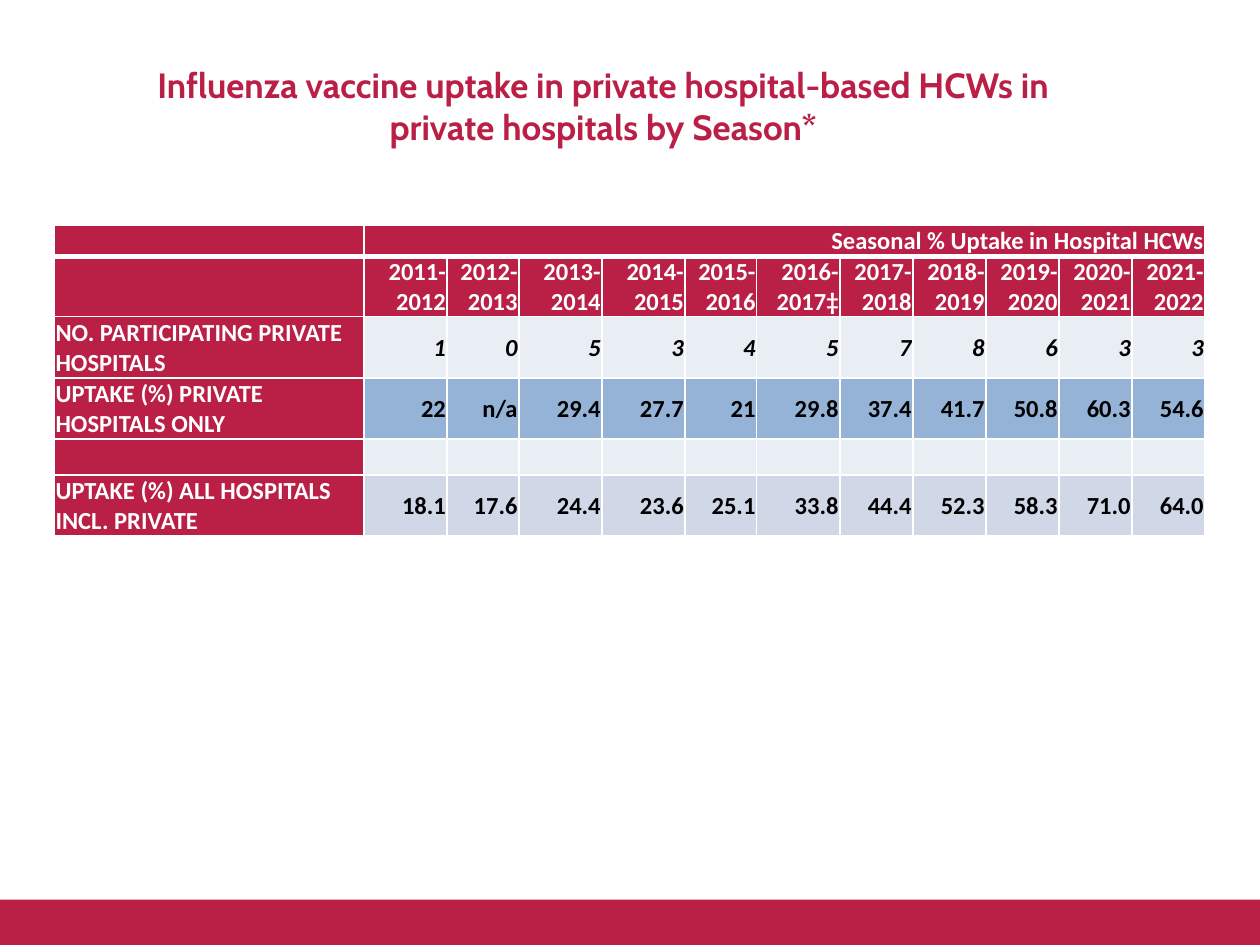
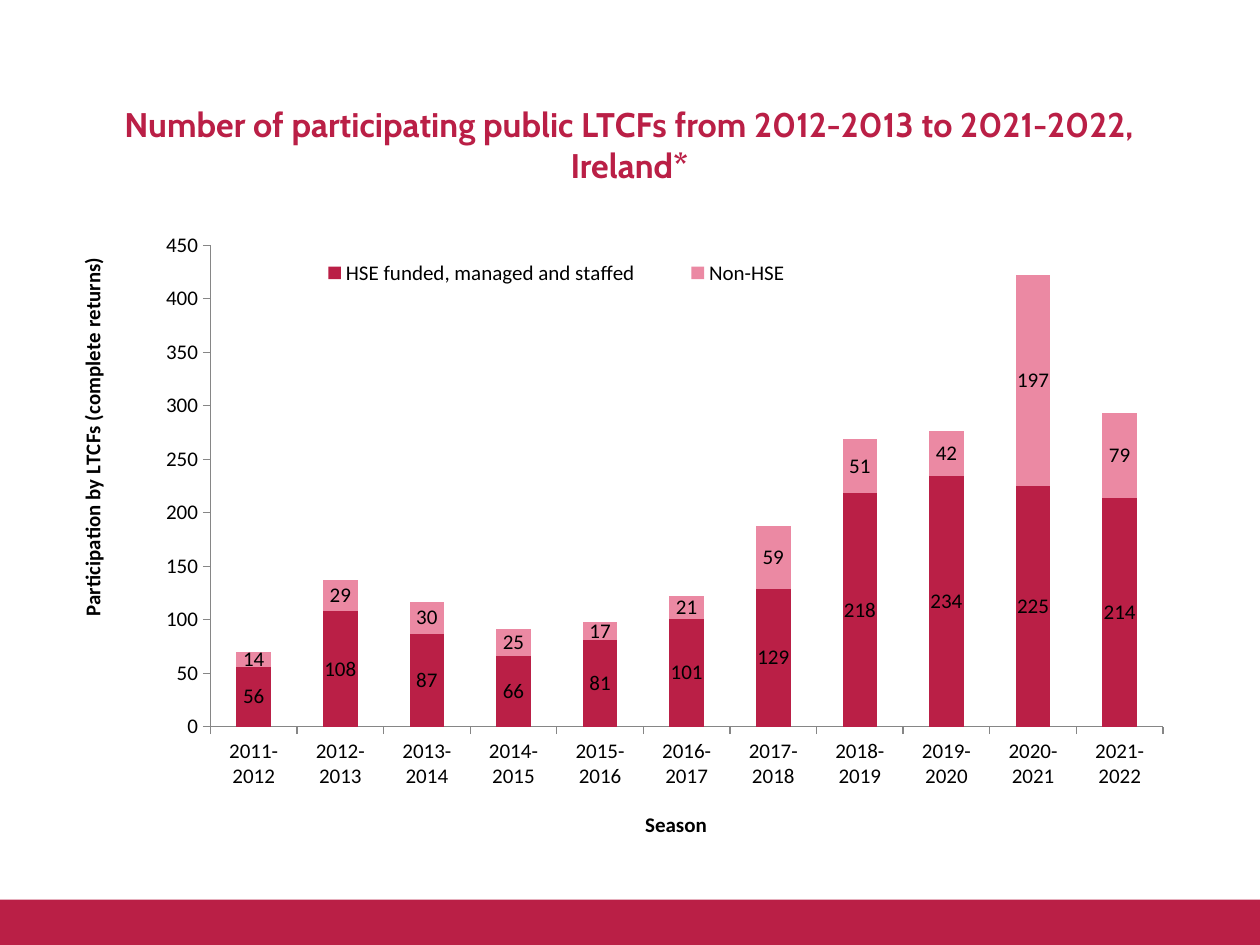
from dataclasses import dataclass
from typing import Any

from lxml.etree import SubElement
from pptx import Presentation
from pptx.chart.data import CategoryChartData
from pptx.dml.color import RGBColor
from pptx.enum.chart import XL_CHART_TYPE, XL_LEGEND_POSITION, XL_TICK_MARK
from pptx.enum.shapes import MSO_SHAPE
from pptx.enum.text import MSO_ANCHOR, PP_ALIGN
from pptx.oxml.ns import qn
from pptx.util import Pt

COLORS = {
    "crimson": "BA1F46",
    "pink": "EB89A3",
    "white": "FFFFFF",
    "black": "000000",
    "pale": "E9EDF4",
    "blue": "95B3D7",
    "mist": "D0D8E8",
    "axis": "868686",
}
SEASONS = [f"{year}-{year + 1}" for year in range(2011, 2022)]
TITLE_FONT = {"name": "Cabin", "bold": True}
TABLE_FONT = {"name": "Calibri", "size": Pt(14), "bold": True}
CHART_FONT = {"name": "Calibri", "size": Pt(12), "bold": False}
AXIS_TITLE_FONT = CHART_FONT | {"bold": True}
CELL_FORMAT = {
    "vertical_anchor": MSO_ANCHOR.MIDDLE,
    "margin_left": Pt(0.72),
    "margin_top": Pt(0.72),
    "margin_right": Pt(0.72),
    "margin_bottom": Pt(0),
}


@dataclass
class Title:
    text: str
    left: float
    top: float
    width: float
    size: float
    height: float = 78.5


@dataclass
class UptakeRow:
    label: str
    values: list[str]
    fill: str
    height: float
    text_color: str = "black"
    italic: bool = False
    top_border: float = 1
    bottom_border: float = 1


@dataclass
class LtcfSeries:
    name: str
    values: list[int]
    color: str


@dataclass
class Box:
    x: float
    y: float
    w: float | None = None
    h: float | None = None


TABLE_TITLE = Title(
    "Influenza vaccine uptake in private hospital-based HCWs in private hospitals by Season*",
    60, 21, 569.5, 20)
CHART_TITLE = Title(
    "Number of participating public LTCFs from 2012-2013 to 2021-2022, Ireland*",
    36.5, 43, 646.5, 19.5)

COLUMN_WIDTHS = [177, 47.5, 41, 47.5, 47.5, 41, 47.5] + [41.75] * 5
UPTAKE_ROWS = [
    UptakeRow("", ["Seasonal % Uptake in Hospital HCWs"] + [""] * 10,
              "crimson", 18, "white", bottom_border=3),
    UptakeRow("", [s + "‡" if s == "2016-2017" else s for s in SEASONS],
              "crimson", 34.5, "white", top_border=3),
    UptakeRow("NO. PARTICIPATING PRIVATE HOSPITALS",
              "1 0 5 3 4 5 7 8 6 3 3".split(), "pale", 35, italic=True),
    UptakeRow("UPTAKE (%) PRIVATE HOSPITALS ONLY",
              "22 n/a 29.4 27.7 21 29.8 37.4 41.7 50.8 60.3 54.6".split(), "blue", 35),
    UptakeRow("", [""] * 11, "pale", 20.5),
    UptakeRow("UPTAKE (%) ALL HOSPITALS INCL. PRIVATE",
              "18.1 17.6 24.4 23.6 25.1 33.8 44.4 52.3 58.3 71.0 64.0".split(), "mist", 34.5),
]
LTCF_SERIES = [
    LtcfSeries("HSE funded, managed and staffed",
               [56, 108, 87, 66, 81, 101, 129, 218, 234, 225, 214], "crimson"),
    LtcfSeries("Non-HSE", [14, 29, 30, 25, 17, 21, 59, 51, 42, 197, 79], "pink"),
]


def rgb(name: str) -> RGBColor:
    return RGBColor.from_string(COLORS[name])


def apply(target: Any, values: dict[str, Any]) -> None:
    for key, value in values.items():
        setattr(target, key, value)


def set_fill(fill: Any, color: str) -> None:
    fill.solid()
    fill.fore_color.rgb = rgb(color)


def set_font(font: Any, values: dict[str, Any], color: str) -> None:
    apply(font, values)
    font.color.rgb = rgb(color)


def add_base_slide(prs: Any, title: Title) -> Any:
    s = prs.slides.add_slide(prs.slide_layouts[6])
    band = s.shapes.add_shape(MSO_SHAPE.RECTANGLE, Pt(0), Pt(514), Pt(720), Pt(26))
    band.shadow.inherit = False
    set_fill(band.fill, "crimson")
    band.line.fill.background()
    sp = s.shapes.add_textbox(Pt(title.left), Pt(title.top), Pt(title.width), Pt(title.height))
    tf = sp.text_frame
    apply(tf, {"word_wrap": True, "vertical_anchor": MSO_ANCHOR.MIDDLE})
    p = tf.paragraphs[0]
    p.alignment = PP_ALIGN.CENTER
    r = p.add_run()
    r.text = title.text
    set_font(r.font, TITLE_FONT | {"size": Pt(title.size)}, "crimson")
    return s


def set_borders(cell: Any, top: float, bottom: float) -> None:
    tc_pr = cell._tc.get_or_add_tcPr()
    for side, width in {"L": 1, "R": 1, "T": top, "B": bottom}.items():
        ln = SubElement(tc_pr, qn(f"a:ln{side}"), w=str(Pt(width)))
        fill = SubElement(ln, qn("a:solidFill"))
        SubElement(fill, qn("a:srgbClr"), val=COLORS["white"])


def fill_cell(cell: Any, row: UptakeRow, text: str, is_label: bool) -> None:
    apply(cell, CELL_FORMAT)
    set_borders(cell, row.top_border, row.bottom_border)
    set_fill(cell.fill, "crimson" if is_label else row.fill)
    p = cell.text_frame.paragraphs[0]
    p.alignment = PP_ALIGN.LEFT if is_label else PP_ALIGN.RIGHT
    if not text:
        SubElement(p._p, qn("a:endParaRPr"), sz="1400")
        return
    r = p.add_run()
    r.text = text
    set_font(r.font, TABLE_FONT | {"italic": row.italic and not is_label},
             "white" if is_label else row.text_color)


def add_uptake_table(s: Any) -> None:
    table = s.shapes.add_table(
        len(UPTAKE_ROWS), len(COLUMN_WIDTHS), Pt(31), Pt(128.5),
        Pt(sum(COLUMN_WIDTHS)), Pt(sum(row.height for row in UPTAKE_ROWS))).table
    for column, width in zip(table.columns, COLUMN_WIDTHS):
        column.width = Pt(width)
    for i, row in enumerate(UPTAKE_ROWS):
        table.rows[i].height = Pt(row.height)
        for j, text in enumerate([row.label, *row.values]):
            fill_cell(table.cell(i, j), row, text, j == 0)
    table.cell(0, 1).merge(table.cell(0, len(SEASONS)))


def set_layout(parent: Any, box: Box, inner: bool = False) -> None:
    for old in parent.findall(qn("c:layout")):
        parent.remove(old)
    layout = SubElement(parent, qn("c:layout"))
    manual = SubElement(layout, qn("c:manualLayout"))
    if inner:
        SubElement(manual, qn("c:layoutTarget"), val="inner")
    for mode in ("xMode", "yMode"):
        SubElement(manual, qn(f"c:{mode}"), val="edge")
    for key in ("x", "y", "w", "h"):
        value = getattr(box, key)
        if value is not None:
            SubElement(manual, qn(f"c:{key}"), val=str(value))
    overlay = parent.find(qn("c:overlay"))
    if overlay is None:
        parent.insert(0, layout)
    else:
        overlay.addprevious(layout)


def format_axis(axis: Any, title: str, box: Box, rotation: int) -> None:
    apply(axis, {"has_major_gridlines": False, "major_tick_mark": XL_TICK_MARK.OUTSIDE,
                 "minor_tick_mark": XL_TICK_MARK.NONE})
    axis.format.line.color.rgb = rgb("axis")
    axis.format.line.width = Pt(0.75)
    set_font(axis.tick_labels.font, CHART_FONT, "black")
    tf = axis.axis_title.text_frame
    tf._txBody.find(qn("a:bodyPr")).set("rot", str(rotation * 60000))
    r = tf.paragraphs[0].add_run()
    r.text = title
    set_font(r.font, AXIS_TITLE_FONT, "black")
    set_layout(axis.axis_title._element, box)


def add_ltcf_chart(s: Any) -> None:
    data = CategoryChartData(number_format="General")
    data.categories = SEASONS
    for item in LTCF_SERIES:
        data.add_series(item.name, item.values)
    chart = s.shapes.add_chart(XL_CHART_TYPE.COLUMN_STACKED, Pt(36), Pt(126),
                               Pt(648), Pt(356.5), data).chart
    apply(chart, {"has_title": False, "has_legend": True})
    set_font(chart.font, CHART_FONT, "black")
    legend = chart.legend
    apply(legend, {"position": XL_LEGEND_POSITION.BOTTOM, "include_in_layout": False})
    set_font(legend.font, CHART_FONT, "black")
    set_layout(legend._element, Box(0.19, 0.05, 0.49, 0.07))
    plot = chart.plots[0]
    apply(plot, {"gap_width": 150, "overlap": 100, "vary_by_categories": False})
    for series, item in zip(plot.series, LTCF_SERIES):
        set_fill(series.format.fill, item.color)
        labels = series.data_labels
        apply(labels, {"show_value": True, "number_format": "0",
                       "number_format_is_linked": False})
        set_font(labels.font, CHART_FONT, "black")
    apply(chart.value_axis, {"minimum_scale": 0, "maximum_scale": 450, "major_unit": 50})
    format_axis(chart.category_axis, "Season", Box(0.51, 0.95), 0)
    format_axis(chart.value_axis, "Participation by LTCFs (complete returns)",
                Box(0.01, 0.06), -90)
    set_layout(chart._chartSpace.chart.plotArea, Box(0.13, 0.04, 0.84, 0.78), inner=True)


def main() -> None:
    prs = Presentation()
    apply(prs, {"slide_width": Pt(720), "slide_height": Pt(540)})
    add_uptake_table(add_base_slide(prs, TABLE_TITLE))
    add_ltcf_chart(add_base_slide(prs, CHART_TITLE))
    prs.save("out.pptx")


if __name__ == "__main__":
    main()
